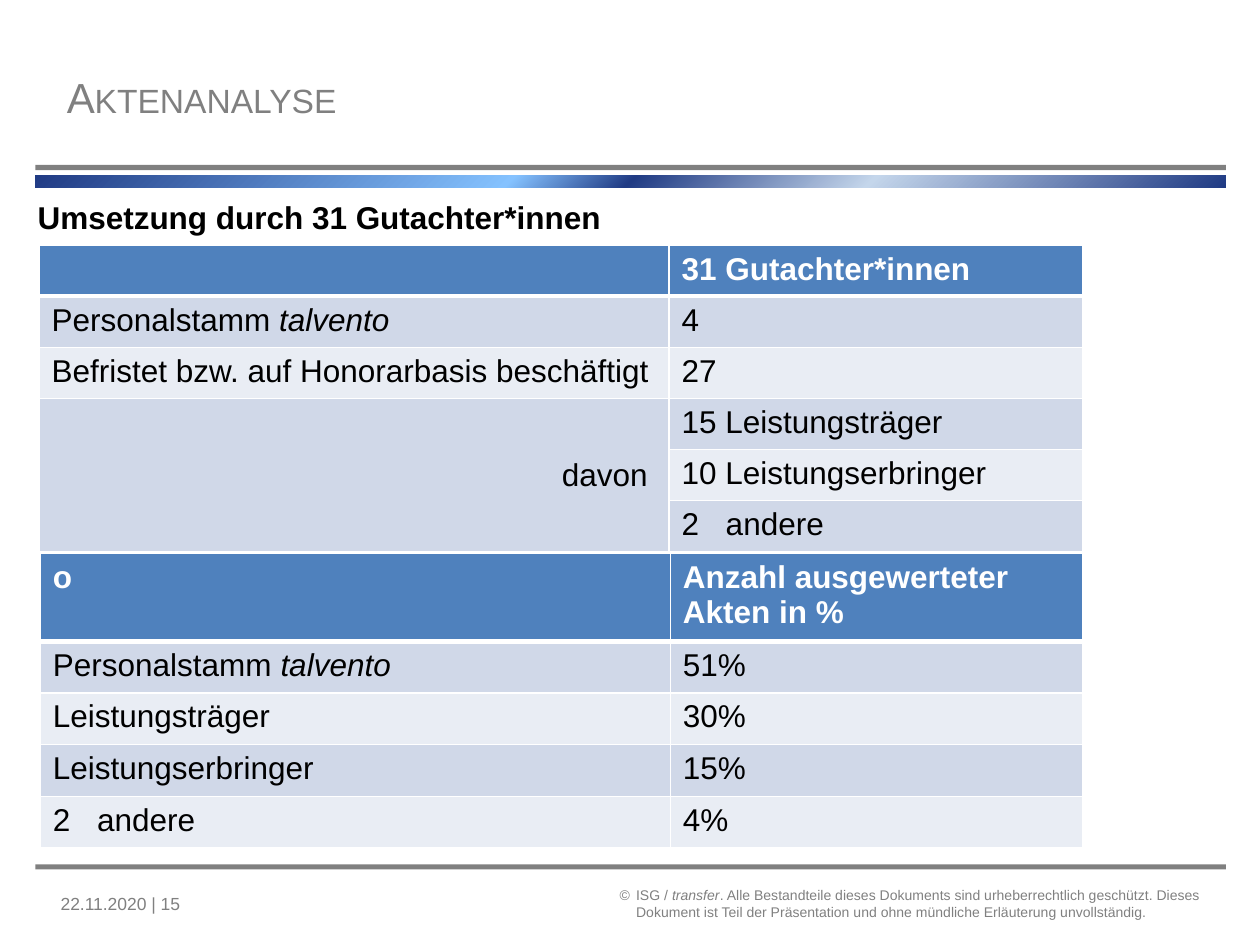
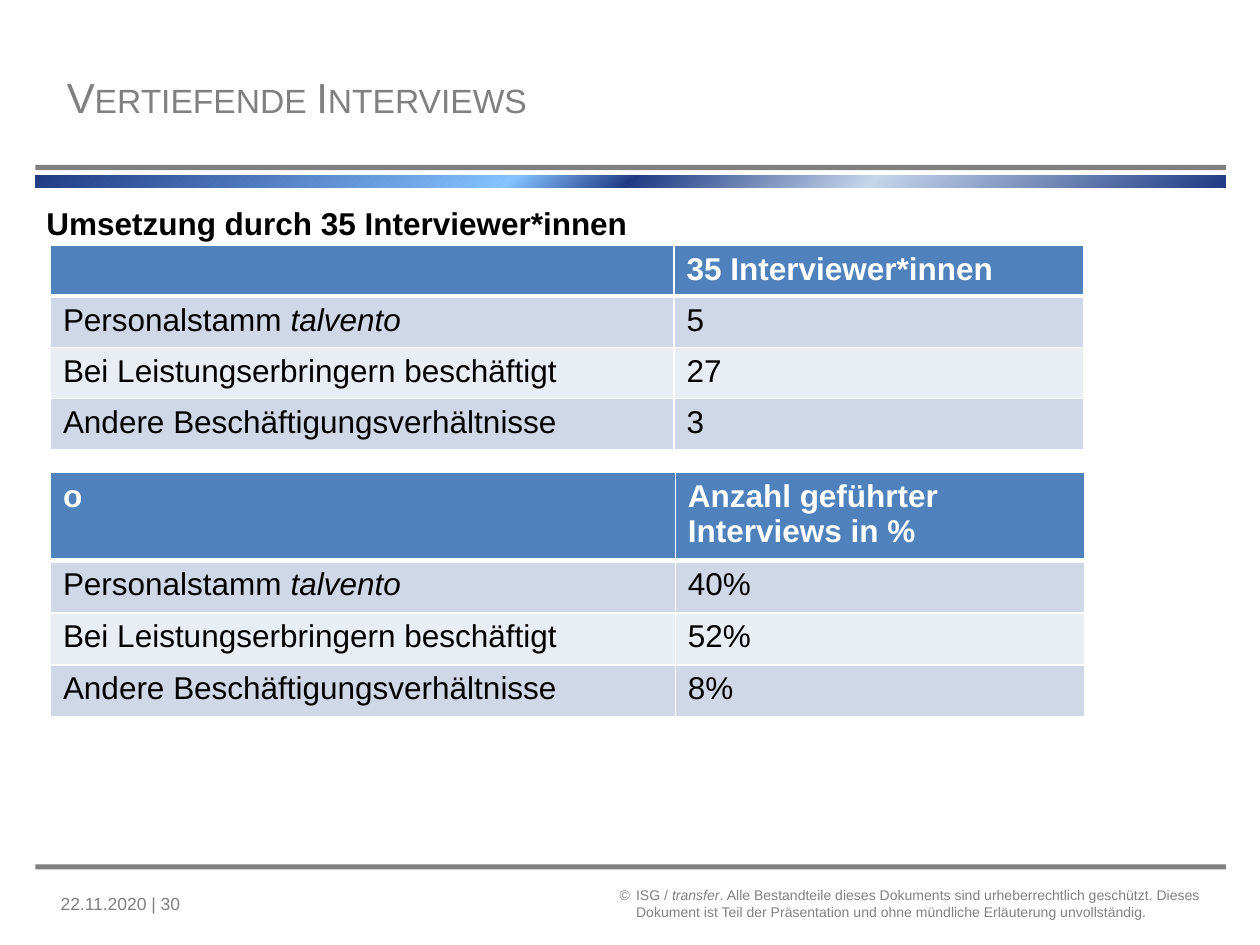
from dataclasses import dataclass

from lxml.etree import SubElement
from pptx import Presentation
from pptx.dml.color import RGBColor
from pptx.enum.shapes import MSO_SHAPE
from pptx.enum.text import MSO_ANCHOR, PP_ALIGN
from pptx.oxml import parse_xml
from pptx.oxml.ns import nsdecls, qn
from pptx.util import Inches, Pt


@dataclass(frozen=True)
class Theme:
    font: str = "Arial"
    gray: str = "808080"
    black: str = "000000"
    white: str = "FFFFFF"
    header: str = "4F81BD"
    bands: tuple = ("D0D8E8", "E9EDF4")
    gradient: tuple = ((0, "203B84"), (40, "85C2FF"), (50, "203B84"),
                       (70, "C4D6EB"), (100, "203B84"), (100, "FFEBFA"))
    title_size: int = 24
    body_size: int = 18
    date_size: int = 10
    notice_size: int = 8


@dataclass(frozen=True)
class TableBlock:
    box: tuple
    widths: tuple
    header_height: float
    rows: tuple  # None marks a cell merged into the one above


THEME = Theme()
ONE_LINE, TWO_LINES = 0.4, 0.68
STAFF = (("Personalstamm ", False), ("talvento", True))
EMPLOYED = "Bei Leistungserbringern beschäftigt"
OTHER = "Andere Beschäftigungsverhältnisse"
NOTICE = (
    ("©\tISG / ", False),
    ("transfer", True),
    (". Alle Bestandteile dieses Dokuments sind urheberrechtlich geschützt. "
     "Dieses Dokument ist Teil der Präsentation und ohne mündliche "
     "Erläuterung unvollständig.", False),
)


def inches(box):
    return [Inches(length) for length in box]


def add_runs(paragraph, content, size, color, bold=False):
    """Add a plain string, or (text, italic) pairs, as formatted runs."""
    pairs = ((content, False),) if isinstance(content, str) else content
    for text, italic in pairs:
        run = paragraph.add_run()
        run.text = text
        font = run.font
        font.name, font.size = THEME.font, Pt(size)
        font.bold, font.italic = bold, italic
        font.color.rgb = RGBColor.from_string(color)


def add_text_box(slide, box, content, size, color, bold=False,
                 anchor=MSO_ANCHOR.TOP):
    frame = slide.shapes.add_textbox(*inches(box)).text_frame
    frame.word_wrap = True
    frame.vertical_anchor = anchor
    paragraph = frame.paragraphs[0]
    add_runs(paragraph, content, size, color, bold)
    return paragraph


def add_tab_stop(paragraph, position):
    properties = paragraph._p.get_or_add_pPr()
    tabs = SubElement(properties, qn("a:tabLst"))
    SubElement(tabs, qn("a:tab"), pos=str(Inches(position)), algn="l")
    return properties


def radial_gradient(stops):
    stop_xml = "".join(
        f'<a:gs pos="{percent * 1000}"><a:srgbClr val="{color}"/></a:gs>'
        for percent, color in stops)
    return parse_xml(
        f'<a:gradFill {nsdecls("a")} rotWithShape="1">'
        f'<a:gsLst>{stop_xml}</a:gsLst><a:path path="circle">'
        '<a:fillToRect r="100000" b="100000"/></a:path></a:gradFill>')


def move_bands_to_master(slide, master):
    """Draw the bands with the slide's tools, then hand them to the master."""
    for top, height in ((1.39, 0.1), (1.31, 0.04), (6.86, 0.04)):
        band = slide.shapes.add_shape(
            MSO_SHAPE.RECTANGLE, *inches((0.28, top, 9.45, height)))
        band.shadow.inherit = False
        band.line.fill.background()
        band.fill.solid()
        band.fill.fore_color.rgb = RGBColor.from_string(THEME.gray)
        if height == 0.1:
            solid = band.element.spPr.find(qn("a:solidFill"))
            band.element.spPr.replace(solid, radial_gradient(THEME.gradient))
        master.shapes.element.append(band.element)


def set_title(slide, text):
    title = slide.shapes.title
    title.left, title.top, title.width, title.height = inches(
        (0.43, 0.3, 6.14, 0.93))
    frame = title.text_frame
    frame.vertical_anchor = MSO_ANCHOR.MIDDLE
    paragraph = frame.paragraphs[0]
    paragraph.alignment = PP_ALIGN.LEFT
    add_runs(paragraph, text, THEME.title_size, THEME.gray)
    paragraph.runs[0]._r.get_or_add_rPr().set("cap", "small")


def add_footer(slide, number):
    date = add_text_box(slide, (0.28, 6.97, 1.35, 0.4),
                        f"22.11.2020 | {number}", THEME.date_size,
                        THEME.gray, anchor=MSO_ANCHOR.MIDDLE)
    date.alignment = PP_ALIGN.CENTER
    notice = add_text_box(slide, (4.82, 6.97, 4.88, 0.4), NOTICE,
                          THEME.notice_size, THEME.gray,
                          anchor=MSO_ANCHOR.MIDDLE)
    properties = add_tab_stop(notice, 0.13)
    properties.set("marL", str(Inches(0.13)))
    properties.set("indent", str(-Inches(0.13)))


def add_subtitle(slide, left, top, text):
    paragraph = add_text_box(slide, (left, top, 9.43, 0.41), text,
                             THEME.body_size, THEME.black, bold=True)
    paragraph.line_spacing = 1.1
    paragraph.space_after = Pt(6)


def set_borders(cell, row_index):
    properties = cell._tc.get_or_add_tcPr()
    heavy_side = {0: "B", 1: "T"}.get(row_index)
    for side in "LRTB":
        width = Pt(3 if side == heavy_side else 1)
        properties.append(parse_xml(
            f'<a:ln{side} {nsdecls("a")} w="{width}"><a:solidFill>'
            f'<a:srgbClr val="{THEME.white}"/></a:solidFill></a:ln{side}>'))


def fill_cell(cell, content, row_index):
    is_header = row_index == 0
    set_borders(cell, row_index)
    fill = THEME.header if is_header else THEME.bands[(row_index - 1) % 2]
    cell.fill.solid()
    cell.fill.fore_color.rgb = RGBColor.from_string(fill)
    if not content:
        return
    paragraph = cell.text_frame.paragraphs[0]
    if "\t" in content:
        add_tab_stop(paragraph, 0.35)
    add_runs(paragraph, content, THEME.body_size,
             THEME.white if is_header else THEME.black, is_header)


def add_table_block(slide, block):
    row_count = len(block.rows)
    table = slide.shapes.add_table(
        row_count, len(block.widths), *inches(block.box)).table
    for column, width in zip(table.columns, block.widths):
        column.width = Inches(width)
    body_height = (block.box[3] - block.header_height) / (row_count - 1)
    for index, row in enumerate(table.rows):
        row.height = Inches(body_height if index else block.header_height)
    for row_index, row in enumerate(block.rows):
        for column_index, content in enumerate(row):
            fill_cell(table.cell(row_index, column_index), content, row_index)
    merged = [index for index, row in enumerate(block.rows) if row[0] is None]
    if merged:
        group = table.cell(merged[0] - 1, 0)
        group.merge(table.cell(merged[-1], 0))
        group.vertical_anchor = MSO_ANCHOR.MIDDLE
        group.text_frame.paragraphs[0].alignment = PP_ALIGN.RIGHT


def add_table_slide(presentation, number, title, subtitle, blocks):
    slide = presentation.slides.add_slide(presentation.slide_layouts[5])
    set_title(slide, title)
    add_footer(slide, number)
    add_subtitle(slide, *subtitle)
    for block in blocks:
        add_table_block(slide, block)
    return slide


def main():
    presentation = Presentation()
    presentation.slide_width, presentation.slide_height = inches((10, 7.5))
    first_slide = add_table_slide(
        presentation, 15, "Aktenanalyse",
        (0.2, 1.49, "Umsetzung durch 31 Gutachter*innen"),
        (
            TableBlock((0.31, 1.95, 8.28, 2.43), (5, 3.28), ONE_LINE, (
                ("", "31 Gutachter*innen"),
                (STAFF, "4"),
                ("Befristet bzw. auf Honorarbasis beschäftigt", "27"),
                ("davon ", "15 Leistungsträger"),
                (None, "10 Leistungserbringer"),
                (None, "2\tandere"),
            )),
            TableBlock((0.32, 4.39, 8.27, 2.32), (5, 3.27), TWO_LINES, (
                ("o", "Anzahl ausgewerteter Akten in %"),
                (STAFF, "51%"),
                ("Leistungsträger", "30%"),
                ("Leistungserbringer", "15%"),
                ("2\tandere", "4%"),
            )),
        ))
    move_bands_to_master(first_slide, presentation.slide_master)
    add_table_slide(
        presentation, 30, "Vertiefende Interviews",
        (0.27, 1.54, "Umsetzung durch 35 Interviewer*innen"),
        (
            TableBlock((0.4, 1.95, 8.2, 1.62), (4.95, 3.25), ONE_LINE, (
                ("", "35 Interviewer*innen"),
                (STAFF, "5"),
                (EMPLOYED, "27"),
                (OTHER, "3"),
            )),
            TableBlock((0.4, 3.75, 8.21, 1.92), (4.96, 3.25), TWO_LINES, (
                ("o", "Anzahl geführter Interviews in %"),
                (STAFF, "40%"),
                (EMPLOYED, "52%"),
                (OTHER, "8%"),
            )),
        ))
    presentation.save("out.pptx")


if __name__ == "__main__":
    main()
